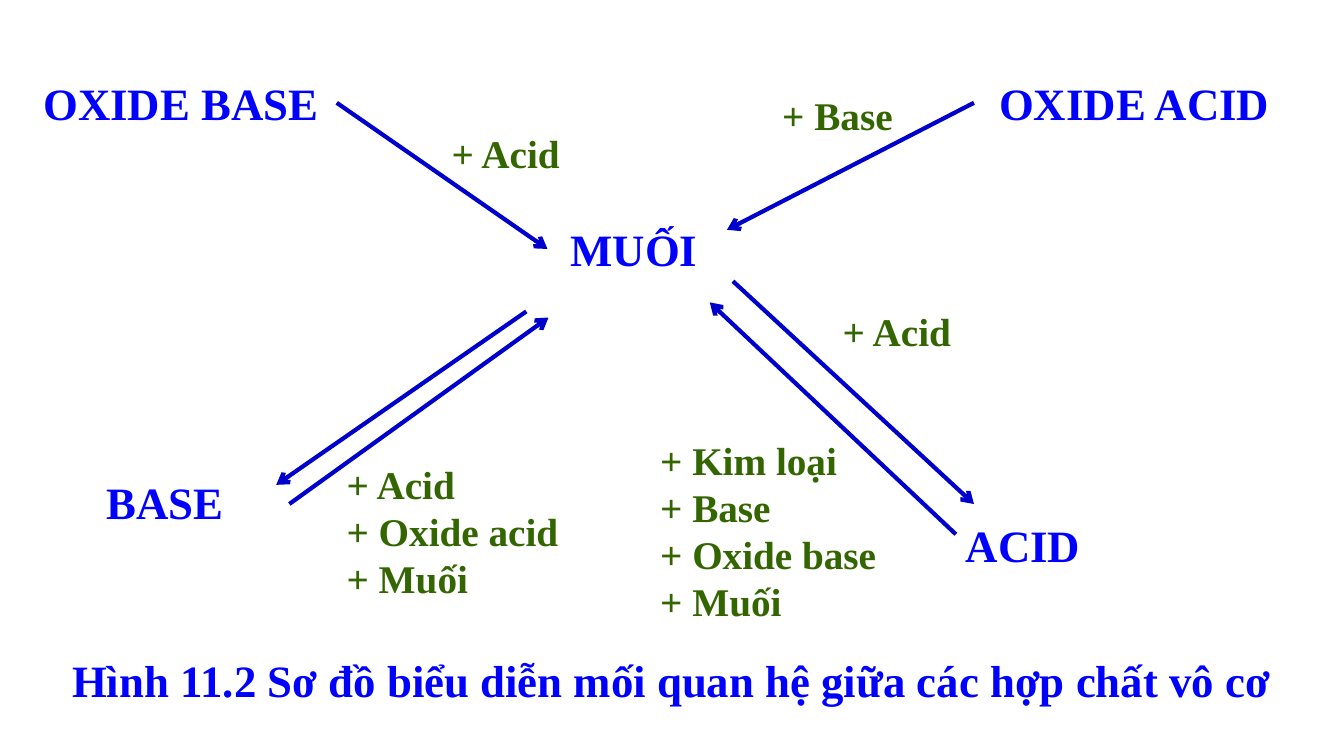
from lxml import etree
from pptx import Presentation
from pptx.dml.color import RGBColor
from pptx.enum.shapes import MSO_CONNECTOR
from pptx.enum.text import MSO_AUTO_SIZE, PP_ALIGN
from pptx.oxml.ns import qn
from pptx.util import Inches, Pt

STRAIGHT = MSO_CONNECTOR.STRAIGHT
FIT_SHAPE = MSO_AUTO_SIZE.SHAPE_TO_FIT_TEXT
LEFT, CENTER = PP_ALIGN.LEFT, PP_ALIGN.CENTER
WIDTH, HEIGHT = 13.33, 7.5
COLUMNS, ROWS = 133.3, 75


def rgb(value):
    return RGBColor.from_string(value)


class Diagram:
    """Draws compounds, reagents and arrows on a grid over one slide."""

    font = "Times New Roman"
    compound_color, compound_size = "0000FF", 32
    reagent_color, reagent_size = "336600", 28
    arrow_color, arrow_width = "0000CC", 3
    line_spacing, padding = 1.215, 0.1

    def __init__(self, prs):
        self.s = prs.slides.add_slide(prs.slide_layouts[6])

    def x(self, column):
        return Inches(column * WIDTH / COLUMNS)

    def y(self, row):
        return Inches(row * HEIGHT / ROWS)

    def text(self, column, row, columns, lines, size, color, align=LEFT):
        height = Inches(self.padding + len(lines) * size * self.line_spacing / 72)
        sp = self.s.shapes.add_textbox(self.x(column), self.y(row), self.x(columns), height)
        tf = sp.text_frame
        tf.word_wrap = True
        tf.auto_size = FIT_SHAPE
        tf.text = "\n".join(lines)
        for p in tf.paragraphs:
            p.alignment = align
            for r in p.runs:
                r.font.name = self.font
                r.font.size = Pt(size)
                r.font.bold = True
                r.font.color.rgb = rgb(color)

    def compound(self, column, row, columns, name, align=LEFT):
        self.text(column, row, columns, [name], self.compound_size, self.compound_color, align)

    def reagents(self, column, row, columns, *names):
        lines = [f"+ {name}" for name in names]
        self.text(column, row, columns, lines, self.reagent_size, self.reagent_color)

    def arrow(self, x1, y1, x2, y2):
        line = self.s.shapes.add_connector(
            STRAIGHT, self.x(x1), self.y(y1), self.x(x2), self.y(y2))
        line.line.color.rgb = rgb(self.arrow_color)
        line.line.width = Pt(self.arrow_width)
        etree.SubElement(line.line._get_or_add_ln(), qn("a:tailEnd"), type="arrow")
        etree.SubElement(line._element.spPr, qn("a:effectLst"))


def main():
    prs = Presentation()
    prs.slide_width, prs.slide_height = Inches(WIDTH), Inches(HEIGHT)
    diagram = Diagram(prs)

    for compound in (
        (55.6, 21.5, 17.7, "MUỐI"),
        (3.3, 7, 31.2, "OXIDE BASE"),
        (9.6, 46.6, 17.7, "BASE"),
        (94.8, 50.9, 17.7, "ACID"),
        (98.1, 7, 32.9, "OXIDE ACID"),
    ):
        diagram.compound(*compound)

    for arrow in (
        (33.4, 10.2, 54.3, 24.7),
        (28.7, 50, 54.4, 31.5),
        (52.2, 30.9, 27.4, 48.1),
        (72.7, 27.9, 96.6, 50),
        (94.8, 53, 70.4, 30),
        (96.6, 10.2, 72.1, 22.8),
    ):
        diagram.arrow(*arrow)

    for reagents in (
        (33.4, 45.2, 30.4, "Acid", "Oxide acid", "Muối"),
        (64.5, 42.8, 30.4, "Kim loại", "Base", "Oxide base", "Muối"),
        (82.6, 30, 15.5, "Acid"),
        (43.8, 12.3, 15.5, "Acid"),
        (76.6, 8.6, 15.5, "Base"),
    ):
        diagram.reagents(*reagents)

    diagram.compound(
        0, 64.3, COLUMNS,
        "Hình 11.2 Sơ đồ biểu diễn mối quan hệ giữa các hợp chất vô cơ", CENTER)
    prs.save("out.pptx")


if __name__ == "__main__":
    main()
